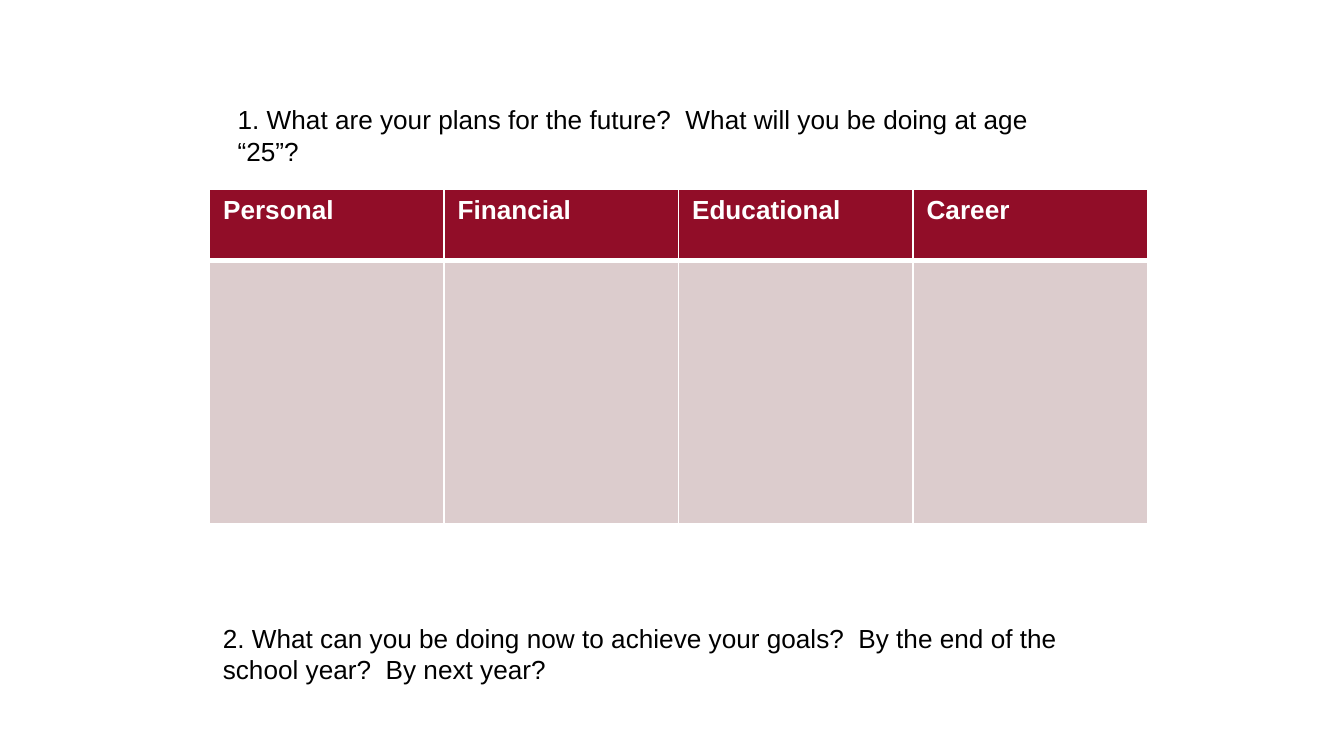
import pptx
import pptx.dml.color
import pptx.enum.text
import pptx.oxml.ns
import pptx.util
from lxml import etree

Inches = pptx.util.Inches
Pt = pptx.util.Pt
RGBColor = pptx.dml.color.RGBColor

CRIMSON = RGBColor(0x91, 0x0D, 0x28)
PALE_ROSE = RGBColor(0xDC, 0xCC, 0xCD)
WHITE = RGBColor(0xFF, 0xFF, 0xFF)
BLACK = RGBColor(0, 0, 0)

# Widescreen, 16:9
SLIDE_WIDTH = Inches(10)
SLIDE_HEIGHT = SLIDE_WIDTH * 9 // 16
LEFT = Inches(1.56)
TABLE_WIDTH = Inches(6.98)
ROW_HEIGHTS = (Inches(0.53), Inches(1.96))
QUESTION_WIDTH = Inches(6.56)

HEADINGS = ("Personal", "Financial", "Educational", "Career")
# left, top, height, text
QUESTIONS = (
    (Inches(1.67), Inches(0.49), Inches(0.78),
     "1. What are your plans for the future?  What will you be doing at age “25”?"),
    (LEFT, Inches(4.35), Inches(0.81),
     "2. What can you be doing now to achieve your goals?  By the end of the "
     "school year?  By next year?"),
)
QUESTION_FORMAT = {"name": "Arial", "size": Pt(14)}
HEADING_FORMAT = {**QUESTION_FORMAT, "bold": True}


def write_text(text_frame, text, font_format, color):
    run = text_frame.paragraphs[0].add_run()
    run.text = text
    for name, value in font_format.items():
        setattr(run.font, name, value)
    run.font.color.rgb = color


def set_borders(cell, widths):
    """Draw white borders; widths maps a side (L, R, T, B) to points."""
    properties = cell._tc.get_or_add_tcPr()
    qn = pptx.oxml.ns.qn
    for side, width in widths.items():
        line = etree.SubElement(properties, qn(f"a:ln{side}"), w=str(Pt(width)))
        fill = etree.SubElement(line, qn("a:solidFill"))
        etree.SubElement(fill, qn("a:srgbClr"), val=str(WHITE))


def style_cell(cell, color, borders):
    set_borders(cell, borders)
    cell.fill.solid()
    cell.fill.fore_color.rgb = color


def add_plan_table(slide):
    table = slide.shapes.add_table(
        len(ROW_HEIGHTS), len(HEADINGS), LEFT, Inches(1.41),
        TABLE_WIDTH, sum(ROW_HEIGHTS)).table
    for row, height in zip(table.rows, ROW_HEIGHTS):
        row.height = height
    for index, heading in enumerate(HEADINGS):
        header, body = table.cell(0, index), table.cell(1, index)
        style_cell(header, CRIMSON, {"L": 1, "R": 1, "T": 1, "B": 3})
        style_cell(body, PALE_ROSE, {"L": 1, "R": 1, "T": 3, "B": 1})
        write_text(header.text_frame, heading, HEADING_FORMAT, WHITE)


def add_question(slide, left, top, height, text):
    text_frame = slide.shapes.add_textbox(left, top, QUESTION_WIDTH, height).text_frame
    frame_format = {
        "word_wrap": True,
        "auto_size": pptx.enum.text.MSO_AUTO_SIZE.SHAPE_TO_FIT_TEXT,
        "margin_top": Inches(0.28),
    }
    for name, value in frame_format.items():
        setattr(text_frame, name, value)
    write_text(text_frame, text, QUESTION_FORMAT, BLACK)


def main():
    presentation = pptx.Presentation()
    presentation.slide_width = SLIDE_WIDTH
    presentation.slide_height = SLIDE_HEIGHT
    # Blank layout, as the slide has no title
    slide = presentation.slides.add_slide(presentation.slide_layouts[6])

    # Table of plans, then the questions around it
    add_plan_table(slide)
    for question in QUESTIONS:
        add_question(slide, *question)

    presentation.save("out.pptx")


if __name__ == "__main__":
    main()
